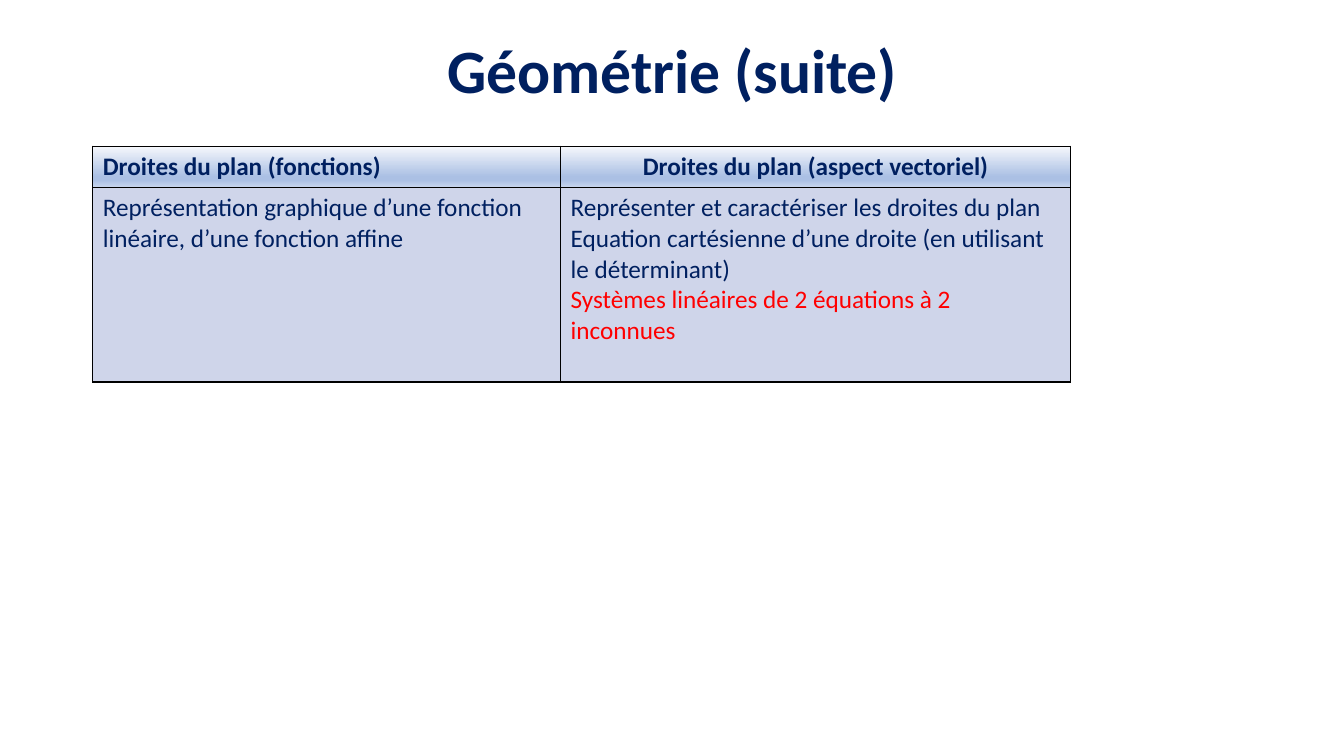
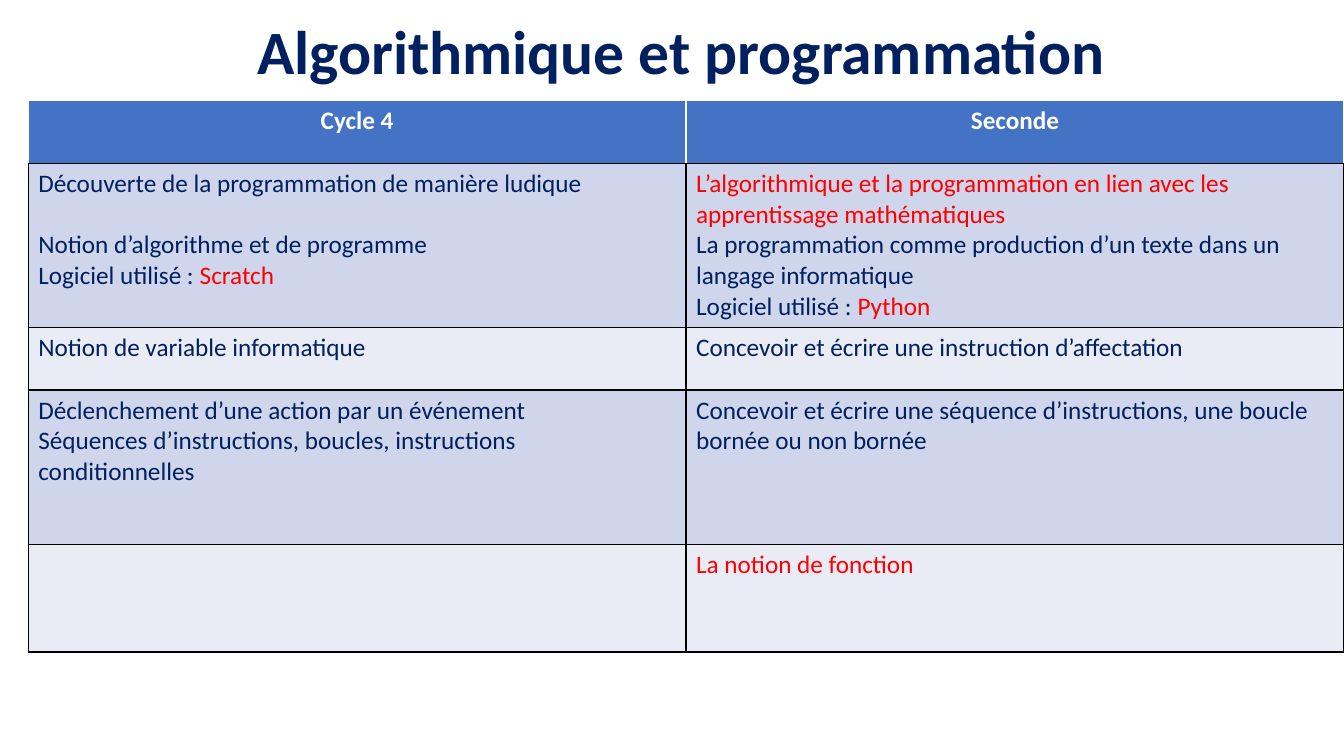
from lxml import etree
from pptx import Presentation
from pptx import util as u
from pptx.dml.color import RGBColor
from pptx.enum import text
from pptx.oxml import ns

WIDTH, HEIGHT = 13.33, 7.5
NAVY, RED, WHITE, BLACK = "002060", "FF0000", "FFFFFF", "000000"
BLUE, BAND_DARK, BAND_LIGHT = "4472C4", "CFD5EA", "E9EBF5"
SHEEN = [(0, "F6F8FC"), (74, "ABC0E4"), (83, "ABC0E4"), (100, "C7D5ED")]
FONT, TITLE_SIZE, BODY_SIZE, LINE_GAP = "Calibri", 44, 18, 22
TITLE_BOX = (11.5, 1.45)


def rgb(value):
    """Return the colour for a hex string."""
    return RGBColor.from_string(value)


def style(font, size, colour, bold=False):
    """Give a font the deck's typeface with a size, colour and weight."""
    font.name, font.size, font.bold = FONT, u.Pt(size), bold
    font.color.rgb = rgb(colour)


def add_title(slide, left, top, wording):
    """Place the centred slide title in a box of the shared size."""
    box = slide.shapes.add_textbox(*map(u.Inches, (left, top, *TITLE_BOX)))
    frame = box.text_frame
    frame.word_wrap = True
    frame.vertical_anchor = text.MSO_ANCHOR.MIDDLE
    title = frame.paragraphs[0]
    title.text = wording
    title.alignment = text.PP_ALIGN.CENTER
    title.line_spacing = 0.9
    style(title.font, TITLE_SIZE, NAVY, True)


def add_stop(stops, position, colour):
    """Append one gradient stop, its position given in percent."""
    stop = etree.SubElement(stops, ns.qn("a:gs"), pos=str(position * 1000))
    etree.SubElement(stop, ns.qn("a:srgbClr"), val=colour)


def paint(cell, fill):
    """Fill a cell with a hex colour or a vertical list of stops."""
    if isinstance(fill, str):
        cell.fill.solid()
        cell.fill.fore_color.rgb = rgb(fill)
        return
    cell.fill.gradient()
    cell.fill.gradient_angle = 270
    stops = next(cell._tc.iter(ns.qn("a:gsLst")))
    for stop in list(stops):
        stops.remove(stop)
    for position, colour in fill:
        add_stop(stops, position, colour)


def outline(cell, edge):
    """Draw one-point borders: left, right and top in edge, bottom in black."""
    properties = cell._tc.get_or_add_tcPr()
    for index, (side, colour) in enumerate(zip("LRTB", (edge, edge, edge, BLACK))):
        line = etree.Element(ns.qn(f"a:ln{side}"), w=str(u.Pt(1)))
        solid = etree.SubElement(line, ns.qn("a:solidFill"))
        etree.SubElement(solid, ns.qn("a:srgbClr"), val=colour)
        properties.insert(index, line)


def write_header(cell, wording, colour, alignment):
    """Write a bold column heading."""
    heading = cell.text_frame.paragraphs[0]
    heading.text = wording
    heading.alignment = alignment
    style(heading.font, BODY_SIZE, colour, True)


def write_body(cell, lines):
    """Write lines of (wording, colour) runs; a leading number is a gap in lines."""
    for index, (gap, *runs) in enumerate(lines):
        frame = cell.text_frame
        paragraph = frame.add_paragraph() if index else frame.paragraphs[0]
        paragraph.space_before = u.Pt(gap * LINE_GAP)
        style(paragraph.font, BODY_SIZE, runs[0][1])
        for wording, colour in runs:
            run = paragraph.add_run()
            run.text = wording
            if colour != runs[0][1]:
                run.font.color.rgb = rgb(colour)


def add_comparison(slide, box, widths, heights, headings, header, rows):
    """Place a two-column table; header is (fill, text colour, edge, alignments)."""
    frame = slide.shapes.add_table(len(heights), len(widths), *map(u.Inches, (*box, sum(widths), sum(heights))))
    table = frame.table
    table.first_row = table.horz_banding = False
    for column, width in zip(table.columns, widths):
        column.width = u.Inches(width)
    for row, height in zip(table.rows, heights):
        row.height = u.Inches(height)
    fill, colour, edge, alignments = header
    for cell, wording, alignment in zip(table.rows[0].cells, headings, alignments):
        write_header(cell, wording, colour, alignment)
        paint(cell, fill)
        outline(cell, edge)
    for number, contents in enumerate(rows, 1):
        for cell, lines in zip(table.rows[number].cells, contents):
            write_body(cell, lines)
            paint(cell, BAND_DARK if number % 2 else BAND_LIGHT)
            outline(cell, BLACK)


def plain(wording, colour=NAVY, gap=0):
    """Return a line made of a single run."""
    return gap, (wording, colour)


def software(name):
    """Return the line that names the software in red."""
    return 0, ("Logiciel utilisé : ", NAVY), (name, RED)


def geometry(slide):
    """Build the geometry slide."""
    left = 0.92
    add_title(slide, left, 0, "Géométrie (suite)")
    rows = [(
        [plain("Représentation graphique d’une fonction linéaire, d’une fonction affine")],
        [plain("Représenter et caractériser les droites du plan"),
         plain("Equation cartésienne d’une droite (en utilisant le déterminant)"),
         plain("Systèmes linéaires de 2 équations à 2 inconnues", RED)],
    )]
    alignments = (text.PP_ALIGN.LEFT, text.PP_ALIGN.CENTER)
    add_comparison(slide, (left, TITLE_BOX[1]), (4.64, 5.06), (0.41, 1.93),
                   ("Droites du plan (fonctions)", "Droites du plan (aspect vectoriel)"),
                   (SHEEN, NAVY, BLACK, alignments), rows)


def programming(slide):
    """Build the algorithms and programming slide."""
    left = 0.28
    add_title(slide, 1.01, -0.18, "Algorithmique et programmation")
    rows = [
        ([plain("Découverte de la programmation de manière ludique"),
          plain("Notion d’algorithme et de programme", gap=1),
          software("Scratch")],
         [plain("L’algorithmique et la programmation en lien avec les apprentissage mathématiques", RED),
          plain("La programmation comme production d’un texte dans un langage informatique"),
          software("Python")]),
        ([plain("Notion de variable informatique")],
         [plain("Concevoir et écrire une instruction d’affectation")]),
        ([plain("Déclenchement d’une action par un événement"),
          plain("Séquences d’instructions, boucles, instructions conditionnelles")],
         [plain("Concevoir et écrire une séquence d’instructions, une boucle bornée ou non bornée")]),
        ([], [plain("La notion de fonction", RED)]),
    ]
    add_comparison(slide, (left, 1), [(WIDTH - left) / 2] * 2, (0.62, 1.63, 0.62, 1.53, 1.07),
                   ("Cycle 4", "Seconde"),
                   (BLUE, WHITE, WHITE, [text.PP_ALIGN.CENTER] * 2), rows)


def main():
    """Build and save the deck."""
    deck = Presentation()
    deck.slide_width, deck.slide_height = u.Inches(WIDTH), u.Inches(HEIGHT)
    for build in (geometry, programming):
        build(deck.slides.add_slide(deck.slide_layouts[6]))
    deck.save("out.pptx")


if __name__ == "__main__":
    main()
